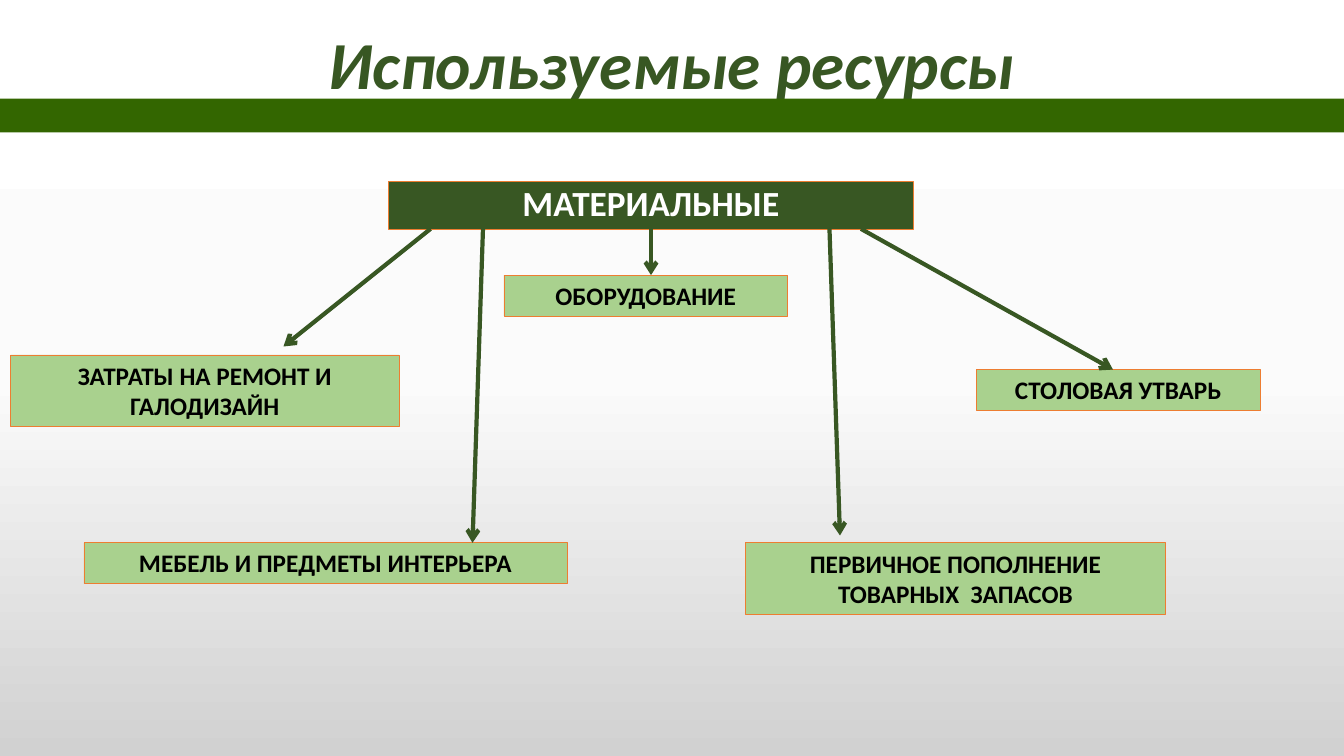
from copy import deepcopy as clone

from lxml.etree import SubElement as sub
from pptx import Presentation
from pptx.dml.color import RGBColor as RGB
from pptx.enum.shapes import MSO_CONNECTOR as LINK, MSO_SHAPE as SHAPE
from pptx.enum.text import MSO_ANCHOR as ANCHOR, PP_ALIGN as ALIGN
from pptx.oxml.ns import qn
from pptx.util import Inches, Pt

WIDE, HIGH = Inches(13.33), Inches(7.5)
COLS, ROWS = 128, 72
HUES = {
    "dark": "385723", "band": "336600", "leaf": "A9D18E", "edge": "ED7D31",
    "white": "FFFFFF", "black": "000000", "mist": "FBFBFB", "grey": "D1D1D1",
}
FADE = ((0, "white"), (0.5, "mist"), (1, "grey"))
HEAD = (37, 17.3, 50, 4.5)
FOOT = HEAD[1] + HEAD[3]
ITEMS = (
    ("ЗАТРАТЫ НА РЕМОНТ И ГАЛОДИЗАЙН", (1, 33.8, 37, 6.8)),
    ("ОБОРУДОВАНИЕ", (48, 26.2, 27, 3.9)),
    ("СТОЛОВАЯ УТВАРЬ", (93, 35.2, 27, 3.9)),
    ("МЕБЕЛЬ И ПРЕДМЕТЫ ИНТЕРЬЕРА", (8, 51.7, 46, 3.9)),
    ("ПЕРВИЧНОЕ ПОПОЛНЕНИЕ ТОВАРНЫХ  ЗАПАСОВ", (71, 51.7, 40, 6.8)),
)
ARROWS = (
    (41, 27, 33), (62, 62, 26.2), (79, 80, 51), (46, 45, 51.7), (82, 106, 35.2),
)


def hue(name):
    """Return the named colour."""
    return RGB.from_string(HUES[name])


def place(*cells):
    """Turn pairs of columns and rows into slide lengths."""
    units = (WIDE / COLS, HIGH / ROWS)
    return [round(cell * units[i % 2]) for i, cell in enumerate(cells)]


def shade(slide):
    """Fill the background with a vertical fade."""
    fill = slide.background.fill
    fill.gradient()
    fill.gradient_angle = 270
    stops = slide.element.find(".//" + qn("a:gsLst"))
    stops.insert(1, clone(stops[0]))
    for stop, (pos, name) in zip(fill.gradient_stops, FADE):
        stop.position = pos
        stop.color.rgb = hue(name)


def write(shape, text, size, color, anchor, **extra):
    """Put one centred bold paragraph in a shape."""
    frame = shape.text_frame
    frame.word_wrap = True
    frame.vertical_anchor = anchor
    para = frame.paragraphs[0]
    para.alignment = ALIGN.CENTER
    run = para.add_run()
    run.text = text
    look = {"name": "Calibri", "size": Pt(size), "bold": True, **extra}
    for key, value in look.items():
        setattr(run.font, key, value)
    run.font.color.rgb = hue(color)
    return para


def block(slide, cells, color, edge=None):
    """Draw a filled rectangle with an optional thin edge."""
    shape = slide.shapes.add_shape(SHAPE.RECTANGLE, *place(*cells))
    shape.shadow.inherit = False
    shape.fill.solid()
    shape.fill.fore_color.rgb = hue(color)
    if edge:
        shape.line.color.rgb = hue(edge)
        shape.line.width = Pt(0.5)
    else:
        shape.line.fill.background()
    return shape


def arrow(slide, start, end, row):
    """Draw an arrow from the head block down to a row."""
    link = slide.shapes.add_connector(
        LINK.STRAIGHT, *place(start, FOOT, end, row))
    link.line.color.rgb = hue("dark")
    link.line.width = Pt(3)
    props = link.element.spPr
    sub(props.find(qn("a:ln")), qn("a:tailEnd"), type="arrow")
    sub(props, qn("a:effectLst"))


def main():
    """Build the slide and save it."""
    deck = Presentation()
    deck.slide_width, deck.slide_height = WIDE, HIGH
    slide = deck.slides.add_slide(deck.slide_layouts[6])
    shade(slide)
    head = block(slide, HEAD, "dark", "edge")
    para = write(head, "МАТЕРИАЛЬНЫЕ", 25.2, "white", ANCHOR.BOTTOM)
    para.line_spacing = 0.9
    title = slide.shapes.add_textbox(*place(0, 2.6, COLS, 6.7))
    write(title, "Используемые ресурсы", 48, "dark", ANCHOR.MIDDLE, italic=True)
    for text, cells in ITEMS:
        item = block(slide, cells, "leaf", "edge")
        write(item, text, 18, "black", ANCHOR.TOP)
    for ends in ARROWS:
        arrow(slide, *ends)
    block(slide, (0, 9.4, COLS, 3.2), "band")
    deck.save("out.pptx")


if __name__ == "__main__":
    main()
